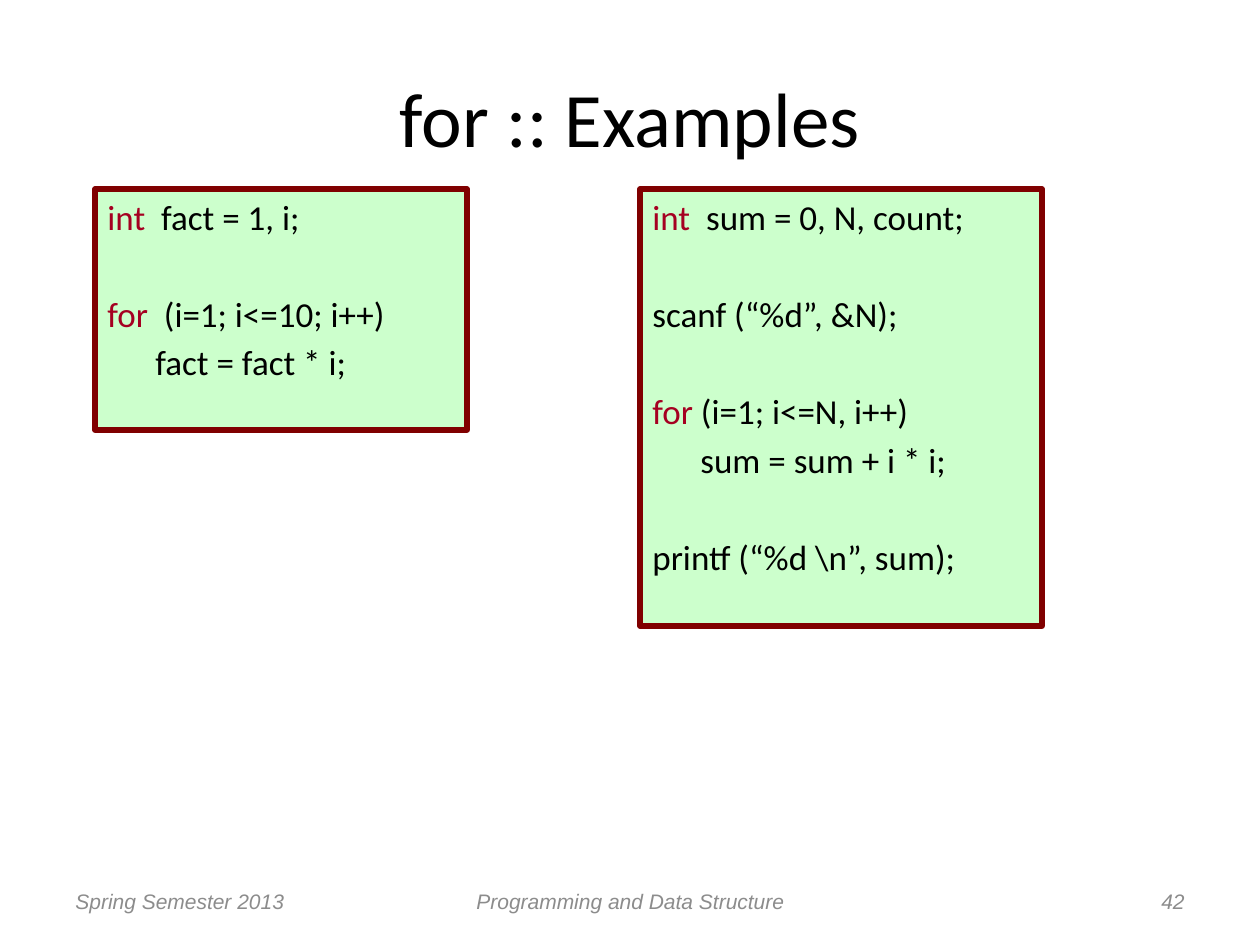
"""Build the "for :: Examples" slide with two code panels and a footer."""
from dataclasses import dataclass

from pptx import Presentation
from pptx import util as u
from pptx.dml.color import RGBColor
from pptx.enum import shapes, text
from pptx.slide import Slide
from pptx.text.text import _Paragraph as Paragraph

EMU_PER_PX = 914400 / 126


@dataclass(frozen=True)
class Theme:
    ink: str = "000000"
    keyword: str = "A50021"
    panel: str = "CCFFCC"
    border: str = "800000"
    footer: str = "8C8C8C"
    body_font: str = "Calibri"
    footer_font: str = "Arial"
    title_size: int = 44
    code_size: int = 20
    footer_size: int = 12
    border_width: int = 3
    line_gap: float = 3.6
    block_gap: float = 31.6
    code_indent: int = 48


@dataclass(frozen=True)
class Box:
    left: int
    top: int
    width: int
    height: int

    def emu(self) -> tuple[u.Emu, ...]:
        return tuple(px(side) for side in (self.left, self.top, self.width, self.height))


@dataclass(frozen=True)
class CodeLine:
    code: str
    keyword: str = ""
    indented: bool = False
    starts_block: bool = False


@dataclass(frozen=True)
class CodePanel:
    box: Box
    lines: tuple[CodeLine, ...]


@dataclass(frozen=True)
class FooterItem:
    box: Box
    words: str
    alignment: text.PP_ALIGN


THEME = Theme()
TITLE_BOX = Box(63, 38, 1134, 158)
PANELS = (
    CodePanel(Box(95, 189, 372, 241), (
        CodeLine("  fact = 1, i;", keyword="int"),
        CodeLine("  (i=1; i<=10; i++)", keyword="for", starts_block=True),
        CodeLine("fact = fact * i;", indented=True),
    )),
    CodePanel(Box(640, 189, 402, 437), (
        CodeLine("  sum = 0, N, count;", keyword="int"),
        CodeLine("scanf (“%d”, &N);", starts_block=True),
        CodeLine(" (i=1; i<=N, i++)", keyword="for", starts_block=True),
        CodeLine("sum = sum + i * i;", indented=True),
        CodeLine("printf (“%d \\n”, sum);", starts_block=True),
    )),
)
FOOTER = (
    FooterItem(Box(63, 876, 294, 50), "Spring Semester 2013", text.PP_ALIGN.LEFT),
    FooterItem(Box(431, 876, 399, 50), "Programming and Data Structure", text.PP_ALIGN.CENTER),
    FooterItem(Box(903, 876, 294, 50), "42", text.PP_ALIGN.RIGHT),
)


def px(length: int) -> u.Emu:
    return u.Emu(round(length * EMU_PER_PX))


def format_runs(paragraph: Paragraph, font: str, size: int, color: str, italic: bool = False) -> None:
    for run in paragraph.runs:
        run.font.name = font
        run.font.size = u.Pt(size)
        run.font.italic = italic
        run.font.color.rgb = RGBColor.from_string(color)


def draw_title(slide: Slide, words: str) -> None:
    title = slide.shapes.title
    title.left, title.top, title.width, title.height = TITLE_BOX.emu()
    frame = title.text_frame
    frame.text = words
    frame.vertical_anchor = text.MSO_ANCHOR.MIDDLE
    paragraph = frame.paragraphs[0]
    paragraph.alignment = text.PP_ALIGN.CENTER
    format_runs(paragraph, THEME.body_font, THEME.title_size, THEME.ink)


def write_code_line(paragraph: Paragraph, line: CodeLine) -> None:
    for words in filter(None, (line.keyword, line.code)):
        paragraph.add_run().text = words
    paragraph.alignment = text.PP_ALIGN.LEFT
    paragraph.space_before = u.Pt(THEME.block_gap if line.starts_block else THEME.line_gap)
    if line.indented:
        paragraph._p.get_or_add_pPr().set("marL", str(px(THEME.code_indent)))
    format_runs(paragraph, THEME.body_font, THEME.code_size, THEME.ink)
    if line.keyword:
        paragraph.runs[0].font.color.rgb = RGBColor.from_string(THEME.keyword)


def draw_panel(slide: Slide, panel: CodePanel) -> None:
    shape = slide.shapes.add_shape(shapes.MSO_SHAPE.RECTANGLE, *panel.box.emu())
    shape.shadow.inherit = False
    shape.fill.solid()
    shape.fill.fore_color.rgb = RGBColor.from_string(THEME.panel)
    shape.line.color.rgb = RGBColor.from_string(THEME.border)
    shape.line.width = u.Pt(THEME.border_width)
    frame = shape.text_frame
    frame.word_wrap = True
    frame.vertical_anchor = text.MSO_ANCHOR.TOP
    for index, line in enumerate(panel.lines):
        paragraph = frame.add_paragraph() if index else frame.paragraphs[0]
        write_code_line(paragraph, line)


def draw_footer_item(slide: Slide, item: FooterItem) -> None:
    frame = slide.shapes.add_textbox(*item.box.emu()).text_frame
    frame.word_wrap = True
    frame.vertical_anchor = text.MSO_ANCHOR.MIDDLE
    frame.text = item.words
    paragraph = frame.paragraphs[0]
    paragraph.alignment = item.alignment
    format_runs(paragraph, THEME.footer_font, THEME.footer_size, THEME.footer, italic=True)


def main() -> None:
    presentation = Presentation()
    presentation.slide_width, presentation.slide_height = px(1260), px(945)
    slide = presentation.slides.add_slide(presentation.slide_layouts[5])
    draw_title(slide, "for :: Examples")
    for panel in PANELS:
        draw_panel(slide, panel)
    for item in FOOTER:
        draw_footer_item(slide, item)
    presentation.save("out.pptx")


if __name__ == "__main__":
    main()
